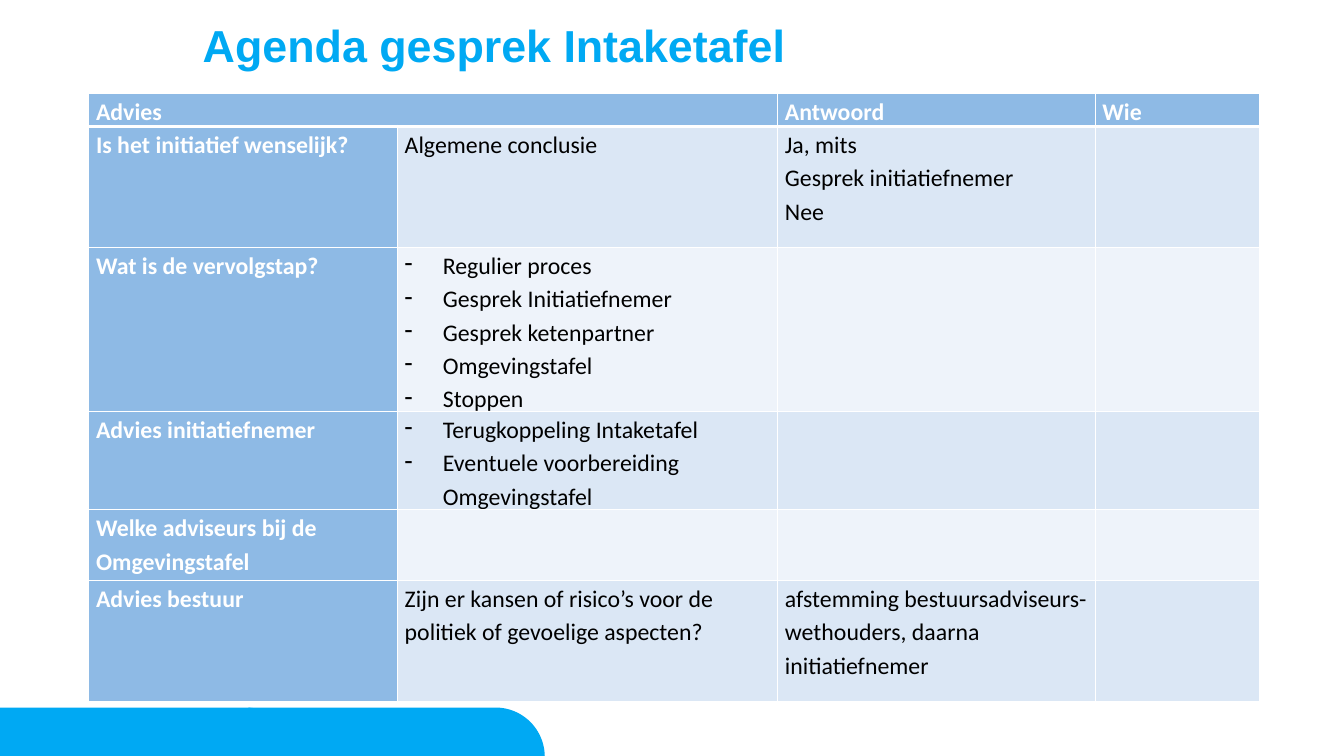
from dataclasses import dataclass
from math import cos, pi, sin

from lxml.etree import SubElement
from pptx import Presentation
from pptx.dml.color import RGBColor
from pptx.oxml import parse_xml
from pptx.oxml.ns import nsdecls, qn
from pptx.slide import Slide
from pptx.table import Table, _Cell
from pptx.util import Cm, Pt

BRIGHT_BLUE = RGBColor(0x00, 0xA9, 0xF3)
HEADER_BLUE = RGBColor(0x8E, 0xBA, 0xE5)
DARK_BAND = RGBColor(0xDB, 0xE7, 0xF5)
LIGHT_BAND = RGBColor(0xEE, 0xF3, 0xFA)
WHITE = RGBColor(0xFF, 0xFF, 0xFF)
BLACK = RGBColor(0x00, 0x00, 0x00)

COLUMN_WIDTHS = (7.78, 9.58, 8.0, 4.14)
BANNER_LEFTS = (-0.03, 6.26)
BANNER_TOP, BANNER_WIDTH, BANNER_HEIGHT = 17.83, 7.47, 1.24
ARC_STEPS = 24


@dataclass(frozen=True)
class AgendaRow:
    height: float
    topic: str
    details: str = ""
    answer: str = ""
    who: str = ""
    bulleted: bool = False


AGENDA = (
    AgendaRow(0.72, "Advies", answer="Antwoord", who="Wie"),
    AgendaRow(3.04, "Is het initiatief wenselijk?", "Algemene conclusie",
              "Ja, mits\nGesprek initiatiefnemer\nNee"),
    AgendaRow(3.81, "Wat is de vervolgstap?",
              "Regulier proces\nGesprek Initiatiefnemer\nGesprek ketenpartner\n"
              "Omgevingstafel\nStoppen", bulleted=True),
    AgendaRow(2.26, "Advies initiatiefnemer",
              "Terugkoppeling Intaketafel\nEventuele voorbereiding Omgevingstafel",
              bulleted=True),
    AgendaRow(1.78, "Welke adviseurs bij de Omgevingstafel"),
    AgendaRow(3.05, "Advies bestuur",
              "Zijn er kansen of risico’s voor de politiek of gevoelige aspecten?",
              "afstemming bestuursadviseurs-wethouders, daarna initiatiefnemer"),
)


def add_banner(slide: Slide, left: float) -> None:
    center_x = left + BANNER_WIDTH - BANNER_HEIGHT
    bottom = BANNER_TOP + BANNER_HEIGHT
    angles = [pi / 2 * (1 - step / ARC_STEPS) for step in range(ARC_STEPS + 1)]
    corner = [(Cm(center_x + BANNER_HEIGHT * cos(angle)),
               Cm(bottom - BANNER_HEIGHT * sin(angle))) for angle in angles]
    outline = slide.shapes.build_freeform(Cm(left), Cm(bottom))
    outline.add_line_segments([(Cm(left), Cm(BANNER_TOP)), *corner])
    banner = outline.convert_to_shape()
    banner.shadow.inherit = False
    banner.fill.solid()
    banner.fill.fore_color.rgb = BRIGHT_BLUE
    banner.line.fill.background()


def add_title(slide: Slide) -> None:
    frame = slide.shapes.add_textbox(Cm(5.11), Cm(0.61), Cm(17.68), Cm(3.48)).text_frame
    frame.word_wrap = True
    frame.margin_left = frame.margin_top = frame.margin_right = frame.margin_bottom = 0
    frame.text = "Agenda gesprek Intaketafel"
    heading = frame.paragraphs[0]
    heading.line_spacing = 0.9
    font = heading.runs[0].font
    font.name, font.size, font.bold = "Arial", Pt(32), True
    font.color.rgb = BRIGHT_BLUE


def set_borders(cell: _Cell, top: float, bottom: float) -> None:
    widths = {"lnL": 1, "lnR": 1, "lnT": top, "lnB": bottom}
    properties = cell._tc.get_or_add_tcPr()
    for position, (edge, width) in enumerate(widths.items()):
        properties.insert(position, parse_xml(
            f'<a:{edge} {nsdecls("a")} w="{Pt(width)}"><a:solidFill>'
            f'<a:srgbClr val="{WHITE}"/></a:solidFill></a:{edge}>'))


def fill_cell(cell: _Cell, text: str, fill: RGBColor, heading: bool, bulleted: bool) -> None:
    cell.margin_left = cell.margin_right = Cm(0.18)
    cell.margin_top = cell.margin_bottom = 0
    cell.fill.solid()
    cell.fill.fore_color.rgb = fill
    cell.text_frame.text = text
    for paragraph in cell.text_frame.paragraphs:
        if bulleted:
            properties = paragraph._p.get_or_add_pPr()
            properties.set("marL", str(Cm(0.96)))
            properties.set("indent", str(-Cm(0.96)))
            SubElement(properties, qn("a:buChar")).set("char", "-")
        paragraph.line_spacing = 1.15
        for run in paragraph.runs:
            run.font.name, run.font.size, run.font.bold = "Calibri", Pt(17), heading
            run.font.color.rgb = WHITE if heading else BLACK


def add_agenda(slide: Slide) -> Table:
    agenda = slide.shapes.add_table(
        len(AGENDA), len(COLUMN_WIDTHS), Cm(2.24), Cm(2.36),
        Cm(sum(COLUMN_WIDTHS)), Cm(sum(row.height for row in AGENDA))).table
    for column, width in zip(agenda.columns, COLUMN_WIDTHS):
        column.width = Cm(width)
    for row_index, row in enumerate(AGENDA):
        agenda.rows[row_index].height = Cm(row.height)
        band = DARK_BAND if row_index % 2 else LIGHT_BAND
        for column_index, text in enumerate((row.topic, row.details, row.answer, row.who)):
            cell = agenda.cell(row_index, column_index)
            heading = row_index == 0 or column_index == 0
            fill_cell(cell, text, HEADER_BLUE if heading else band, heading,
                      row.bulleted and column_index == 1)
            set_borders(cell, top=3 if row_index == 1 else 1,
                        bottom=3 if row_index == 0 else 1)
    agenda.cell(0, 0).merge(agenda.cell(0, 1))
    return agenda


def main() -> None:
    presentation = Presentation()
    presentation.slide_width, presentation.slide_height = Cm(33.87), Cm(19.05)
    slide = presentation.slides.add_slide(presentation.slide_layouts[6])
    for left in BANNER_LEFTS:
        add_banner(slide, left)
    add_title(slide)
    add_agenda(slide)
    presentation.save("out.pptx")


if __name__ == "__main__":
    main()
